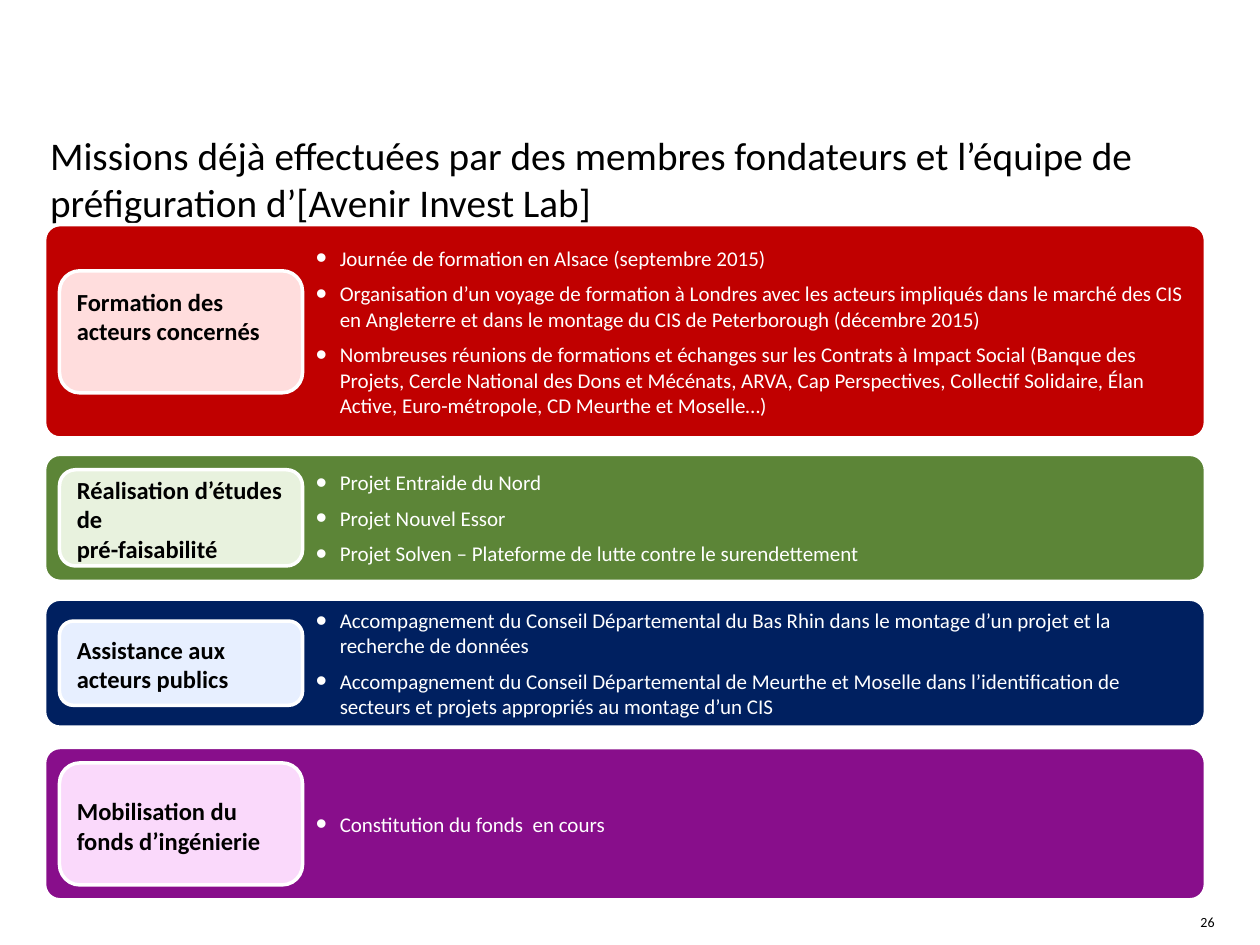
from pptx import Presentation
from pptx.dml.color import RGBColor as Rgb
from pptx.enum.shapes import MSO_SHAPE as Kind
from pptx.enum.text import MSO_ANCHOR as Anchor, PP_ALIGN as Align
from pptx.util import Cm, Pt
from lxml.etree import SubElement as Sub

BLACK, WHITE = Rgb(0, 0, 0), Rgb(255, 255, 255)
RED, ROSE = Rgb(0xC0, 0, 0), Rgb(0xFF, 0xDD, 0xDD)
GREEN, MINT = Rgb(0x5C, 0x85, 0x37), Rgb(0xE8, 0xF2, 0xDE)
NAVY, SKY = Rgb(0, 0x20, 0x60), Rgb(0xE7, 0xEF, 0xFF)
PLUM, PINK = Rgb(0x88, 0x0E, 0x8B), Rgb(0xFA, 0xD9, 0xFB)
NS = "{http://schemas.openxmlformats.org/drawingml/2006/main}"

TITLE = ("Missions déjà effectuées par des membres fondateurs et l’équipe de "
         "préfiguration d’[Avenir Invest Lab]")
ROWS = [
    ((4.53, 4.3, RED), (5.46, 2.46, ROSE), (5.66, 2.06, ["Formation des acteurs concernés"]), [
        "Journée de formation en Alsace (septembre 2015)",
        "Organisation d’un voyage de formation à Londres avec les acteurs impliqués dans le "
        "marché des CIS en Angleterre et dans le montage du CIS de Peterborough (décembre 2015)",
        "Nombreuses réunions de formations et échanges sur les Contrats à Impact Social "
        "(Banque des Projets, Cercle National des Dons et Mécénats, ARVA, Cap Perspectives, "
        "Collectif Solidaire, Élan Active, Euro-métropole, CD Meurthe et Moselle…)"]),
    ((9.16, 2.56, GREEN), (9.47, 1.94, MINT),
     (9.45, 2.06, ["Réalisation d’études de ", "pré-faisabilité"]), [
        "Projet Entraide du Nord",
        "Projet Nouvel Essor",
        "Projet Solven – Plateforme de lutte contre le surendettement"]),
    ((12.08, 2.58, NAVY), (12.52, 1.7, SKY), (12.67, 1.45, ["Assistance aux acteurs publics"]), [
        "Accompagnement du Conseil Départemental du Bas Rhin dans le montage d’un projet "
        "et la recherche de données",
        "Accompagnement du Conseil Départemental de Meurthe et Moselle dans "
        "l’identification de secteurs et projets appropriés au montage d’un CIS"]),
    ((15.07, 3.07, PLUM), (15.38, 2.46, PINK),
     (15.93, 2.06, ["Mobilisation du fonds d’ingénierie"]), ["Constitution du fonds  en cours"]),
]


class Deck:
    """Holds the style and the current slide, and draws each kind of element."""

    def __init__(self, slide, font="Calibri"):
        self.slide, self.font = slide, font

    def run(self, para, text, size, color, bold=False):
        run = para.add_run()
        run.text = text
        run.font.name, run.font.size, run.font.bold = self.font, Pt(size), bold
        run.font.color.rgb = color

    def pad(self, frame, left, rest):
        frame.margin_left = Cm(left)
        frame.margin_top = frame.margin_right = frame.margin_bottom = Cm(rest)

    def text(self, left, top, width, height, lines, size, bold=False):
        frame = self.slide.shapes.add_textbox(Cm(left), Cm(top), Cm(width), Cm(height)).text_frame
        frame.word_wrap = True
        para = frame.paragraphs[0]
        for i, line in enumerate(lines):
            if i:
                para.add_line_break()
            self.run(para, line, size, BLACK, bold)
        return frame

    def box(self, left, top, width, height, fill):
        shape = self.slide.shapes.add_shape(
            Kind.ROUNDED_RECTANGLE, Cm(left), Cm(top), Cm(width), Cm(height))
        shape.shadow.inherit = False
        shape.fill.solid()
        shape.fill.fore_color.rgb = fill
        shape.line.color.rgb, shape.line.width = WHITE, Pt(2)
        return shape

    def panel(self, top, height, fill, items):
        shape = self.box(0.9, top, 23.4, height, fill)
        shape.adjustments[0] = 0.31 / height
        frame = shape.text_frame
        frame.word_wrap, frame.vertical_anchor = True, Anchor.MIDDLE
        self.pad(frame, 5.12, 0.14)
        for i, item in enumerate(items):
            para = frame.add_paragraph() if i else frame.paragraphs[0]
            self.bullet(para)
            self.run(para, item, 12, WHITE)

    def bullet(self, para):
        para.alignment, para.space_before = Align.LEFT, Pt(6)
        props = para._p.get_or_add_pPr()
        props.set("marL", str(Cm(0.74)))
        props.set("indent", str(Cm(-0.48)))
        Sub(Sub(props, NS + "buClr"), NS + "srgbClr", val=str(WHITE))
        Sub(props, NS + "buSzPct", val="150000")
        Sub(props, NS + "buFont", typeface="Arial")
        Sub(props, NS + "buChar", char="•")


def main():
    prs = Presentation()
    prs.slide_width, prs.slide_height = Cm(25.4), Cm(19.05)
    deck = Deck(prs.slides.add_slide(prs.slide_layouts[6]))
    deck.text(0.76, 2.53, 23.95, 1.8, [TITLE], 22.4)
    for panel, tag, (top, height, lines), items in ROWS:
        deck.panel(*panel, items)
        deck.box(1.2, tag[0], 4.9, *tag[1:])
        deck.text(1.3, top, 4.8, height, lines, 14, True)
    deck.pad(deck.text(24.1, 18.31, 0.61, 0.61, ["26"], 8), 0.1, 0.1)
    prs.save("out.pptx")


if __name__ == "__main__":
    main()
